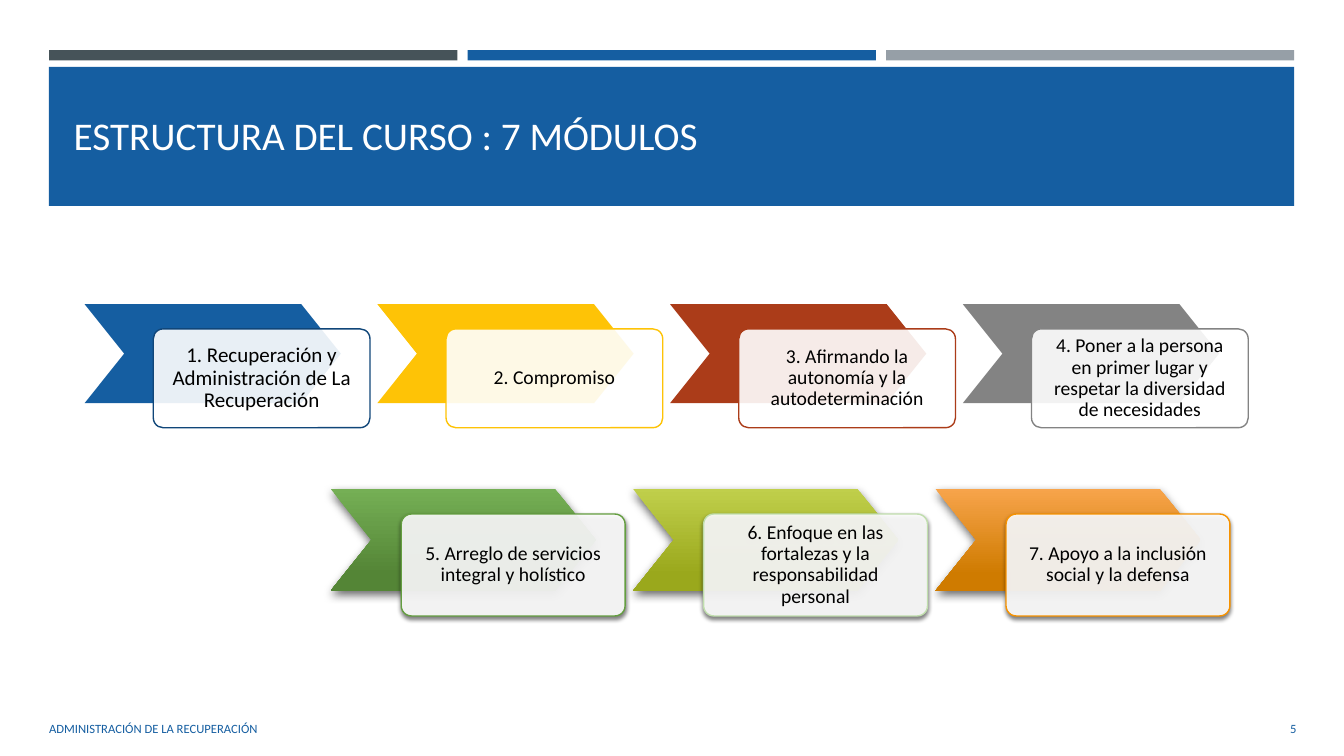
import pptx
import pptx.util
import pptx.dml.color
import pptx.enum.shapes
import pptx.enum.text
import pptx.oxml
import pptx.oxml.ns
from lxml import etree

Pt = pptx.util.Pt
SHAPE = pptx.enum.shapes.MSO_SHAPE
ALIGN = pptx.enum.text.PP_ALIGN

# Content
TITLE = "ESTRUCTURA DEL CURSO : 7 MÓDULOS"
FOOTER = "ADMINISTRACIÓN DE LA RECUPERACIÓN"
PAGE = "5"
# Modules: text, chevron colours (two make a gradient), card outline, text size
FIRST_ROW = [
    ("1. Recuperación y Administración de La Recuperación", ["155EA1"], "104679", 15),
    ("2. Compromiso", ["FEC306"], "FEC306", 14),
    ("3. Afirmando la autonomía y la autodeterminación", ["AB3C19"], "AB3C19", 14),
    ("4. Poner a la persona en primer lugar y respetar la diversidad de necesidades",
     ["838383"], "838383", 14),
]
SECOND_ROW = [
    ("5. Arreglo de servicios integral y holístico", ["75AF55", "548536"], "649E40", 14),
    ("6. Enfoque en las fortalezas y la responsabilidad personal",
     ["C0CF4B", "9AA81C"], "C0DEAD", 14),
    ("7. Apoyo a la inclusión social y la defensa", ["F7A44B", "CF7B00"], "F69200", 14),
]
# Row geometry: left, top, step, chevron width, height, card offset x and y, card width
ROWS = [
    (FIRST_ROW, (60.5, 217.3, 209.1, 183, 70.6, 49, 17.6, 154.8), False),
    (SECOND_ROW, (236.2, 349.2, 216, 189.4, 72.8, 50.4, 18, 159.9), True),
]
THEME = {
    "font": "Calibri", "blue": "155EA1", "white": "FFFFFF", "black": "000000",
    "bars": ["465359", "155EA1", "969FA7"],
    "title_size": 28, "footer_size": 9, "card_opacity": 90, "gradient_end": 0.84,
    # opacity, blur, distance, direction
    "chevron_shadow": (60, 7, 3, 84), "card_shadow": (55, 3, 2, 90),
}


def rgb(color):
    return pptx.dml.color.RGBColor.from_string(color)


def add_alpha(color_element, percent):
    alpha = etree.SubElement(color_element, pptx.oxml.ns.qn("a:alpha"))
    alpha.set("val", str(percent * 1000))


def add_shadow(sp, opacity, blur, distance, direction):
    effects = sp._element.spPr.find(pptx.oxml.ns.qn("a:effectLst"))
    shadow = etree.SubElement(effects, pptx.oxml.ns.qn("a:outerShdw"), {
        "blurRad": str(Pt(blur)), "dist": str(Pt(distance)),
        "dir": str(direction * 60000), "algn": "ctr", "rotWithShape": "0"})
    color = etree.SubElement(shadow, pptx.oxml.ns.qn("a:srgbClr"), {"val": THEME["black"]})
    add_alpha(color, opacity)


def add_shape(s, kind, box, colors, adjust=None):
    sp = s.shapes.add_shape(kind, *map(Pt, box))
    sp.shadow.inherit = False
    sp.line.fill.background()
    if adjust is not None:
        sp.adjustments[0] = adjust
    if len(colors) == 1:
        sp.fill.solid()
        sp.fill.fore_color.rgb = rgb(colors[0])
    else:
        sp.fill.gradient()
        sp.fill.gradient_angle = 270
        for stop, color, position in zip(sp.fill.gradient_stops, colors,
                                         (0, THEME["gradient_end"])):
            stop.color.rgb = rgb(color)
            stop.position = position
    return sp


def write(sp, text, size, color, align):
    tf = sp.text_frame
    tf.word_wrap = True
    tf.vertical_anchor = pptx.enum.text.MSO_ANCHOR.MIDDLE
    p = tf.paragraphs[0]
    p.text = text
    p.alignment = align
    p.font.name = THEME["font"]
    p.font.size = Pt(size)
    p.font.color.rgb = rgb(color)
    return tf


def add_text(s, box, *style):
    write(s.shapes.add_textbox(*map(Pt, box)), *style)


def add_module(s, module, left, geometry, shadowed):
    text, colors, outline, size = module
    _, top, _, width, height, dx, dy, card_width = geometry
    chevron = add_shape(s, SHAPE.CHEVRON, (left, top, width, height), colors, 0.4)
    card = add_shape(s, SHAPE.ROUNDED_RECTANGLE,
                     (left + dx, top + dy, card_width, height), [THEME["white"]], 0.1)
    add_alpha(card._element.spPr.find(".//" + pptx.oxml.ns.qn("a:srgbClr")),
              THEME["card_opacity"])
    card.line.color.rgb = rgb(outline)
    card.line.width = Pt(1)
    if shadowed:
        add_shadow(chevron, *THEME["chevron_shadow"])
        add_shadow(card, *THEME["card_shadow"])
    tf = write(card, text, size, THEME["black"], ALIGN.CENTER)
    tf.paragraphs[0].line_spacing = 0.9
    inset = Pt(size * 0.57)
    tf.margin_left = tf.margin_right = tf.margin_top = tf.margin_bottom = inset


def main():
    prs = pptx.Presentation()
    prs.slide_width, prs.slide_height = Pt(960), Pt(540)
    s = prs.slides.add_slide(prs.slide_layouts[6])

    # Top bars and title band
    for i, color in enumerate(THEME["bars"]):
        add_shape(s, SHAPE.RECTANGLE, (35.1 + i * 298.9, 35.8, 291.6, 7.4), [color])
    add_shape(s, SHAPE.RECTANGLE, (34.9, 47.7, 889.6, 99.3), [THEME["blue"]])
    add_text(s, (45.5, 57.6, 868.3, 77.8), TITLE, THEME["title_size"],
             THEME["white"], ALIGN.LEFT)

    # Module rows
    for modules, geometry, shadowed in ROWS:
        for i, module in enumerate(modules):
            add_module(s, module, geometry[0] + i * geometry[2], geometry, shadowed)

    # Footer and page number
    add_text(s, (28, 506.2, 537, 28.8), FOOTER, THEME["footer_size"],
             THEME["blue"], ALIGN.LEFT)
    add_text(s, (850.3, 506.2, 82.8, 28.8), PAGE, THEME["footer_size"],
             THEME["blue"], ALIGN.RIGHT)
    prs.save("out.pptx")


if __name__ == "__main__":
    main()
